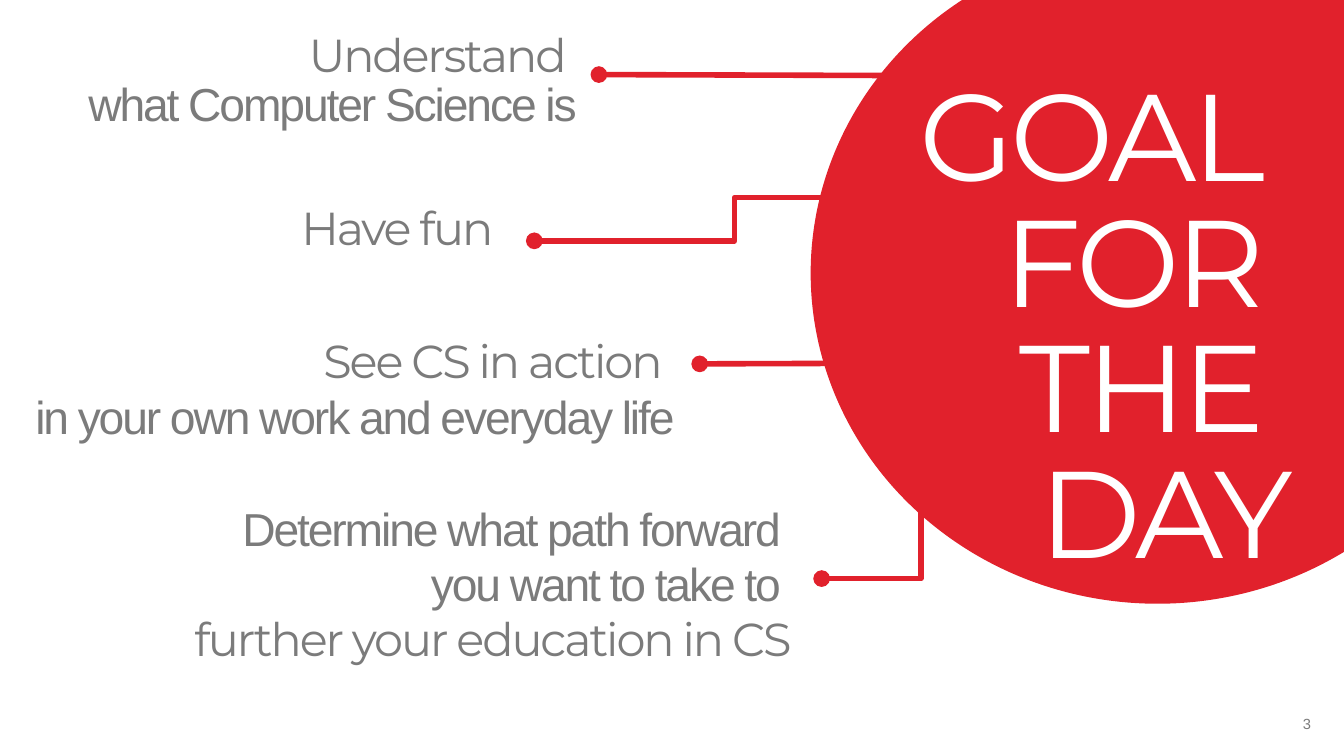
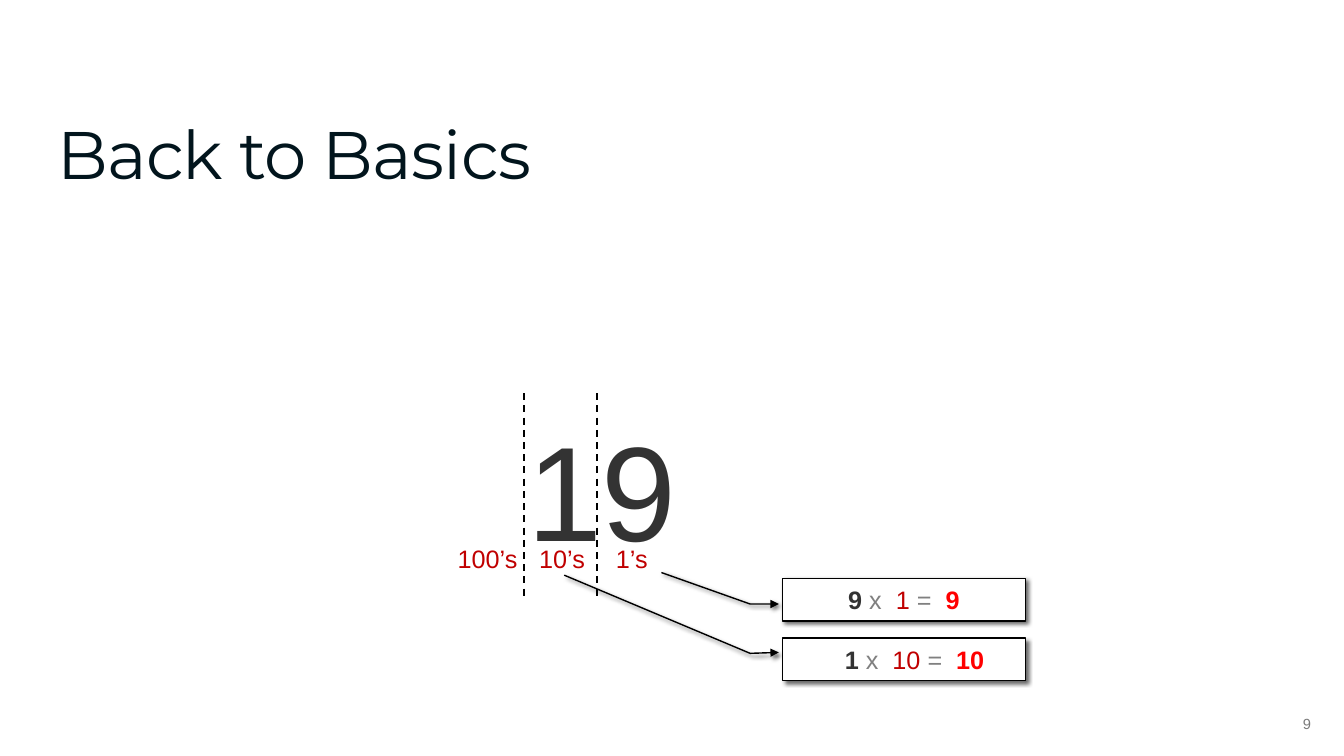
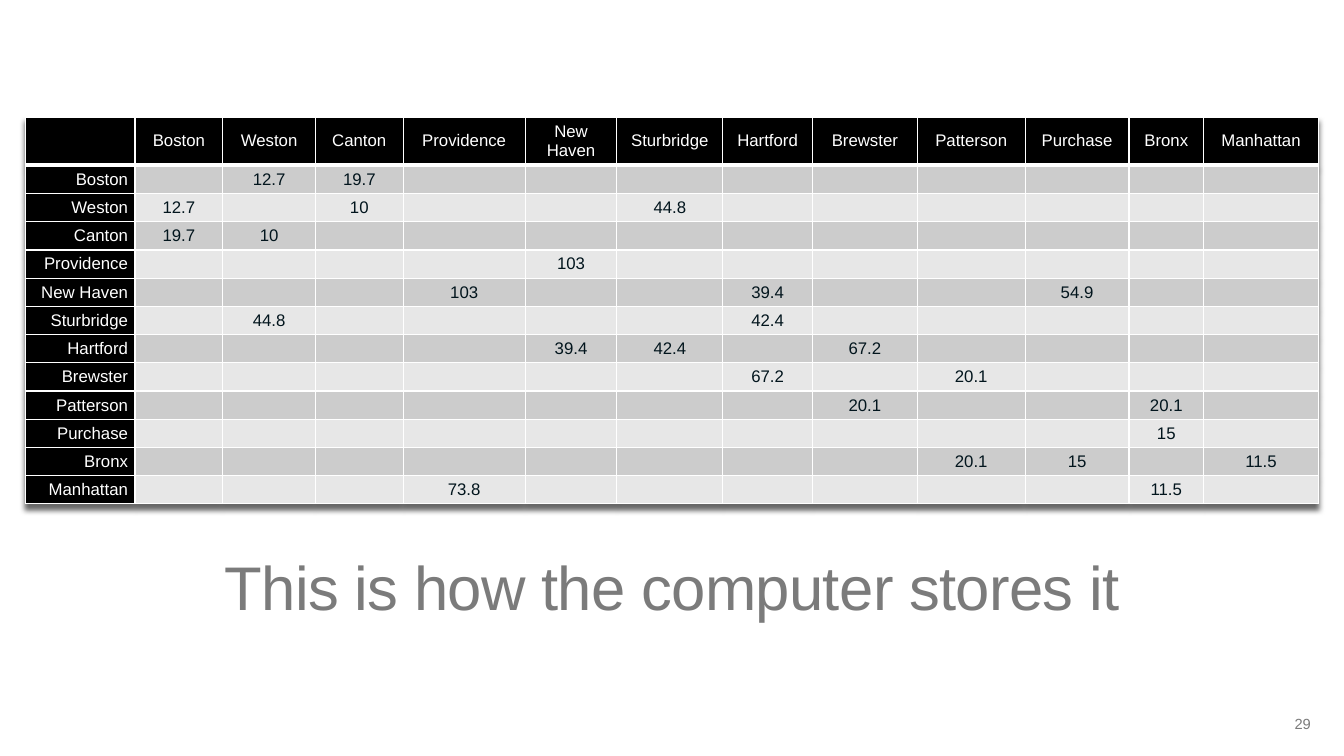
from dataclasses import dataclass

from lxml import etree
from pptx import Presentation
from pptx.dml.color import RGBColor
from pptx.enum.dml import MSO_LINE
from pptx.enum.shapes import MSO_CONNECTOR, MSO_SHAPE
from pptx.enum.text import MSO_ANCHOR, PP_ALIGN
from pptx.oxml.ns import qn
from pptx.util import Inches, Pt

LEFT, CENTER, RIGHT = PP_ALIGN.LEFT, PP_ALIGN.CENTER, PP_ALIGN.RIGHT
TOP, MIDDLE, BOTTOM = MSO_ANCHOR.TOP, MSO_ANCHOR.MIDDLE, MSO_ANCHOR.BOTTOM
STRAIGHT, ELBOW = MSO_CONNECTOR.STRAIGHT, MSO_CONNECTOR.ELBOW
OVAL, CALLOUT = MSO_SHAPE.OVAL, MSO_SHAPE.LINE_CALLOUT_2
DASH = MSO_LINE.DASH


@dataclass(frozen=True)
class Theme:
    sans: str = "Arial"
    display: str = "Montserrat"
    red: str = "E1212C"
    gray: str = "7B7B7B"
    ink: str = "02151D"
    black: str = "000000"
    white: str = "FFFFFF"
    digit: str = "333333"
    place: str = "C00000"
    operator: str = "808080"
    result: str = "FF0000"
    bands: tuple = ("CCCCCC", "E7E7E7")
    hero: float = 88
    title: float = 48
    caption: float = 44
    goal: float = 33
    number: float = 96
    label: float = 18
    cell: float = 12
    footer: float = 10.5


T = Theme()
GOAL = {"size": T.goal, "color": T.gray, "spacing": -1.5}
GOAL_SANS = {**GOAL, "name": T.sans}
GOAL_DISPLAY = {**GOAL, "name": T.display}
LABEL = {"name": T.sans, "size": T.label}
PLACE = {**LABEL, "color": T.place}

COLUMN_WIDTHS = [1.09, 0.87, 0.92, 0.87, 1.21, 0.91, 1.05, 0.89, 1.04, 1.07, 1.03, 0.74, 1.14]
DISTANCES = {
    "Boston": {"Weston": "12.7", "Canton": "19.7"},
    "Weston": {"Boston": "12.7", "Canton": "10", "Sturbridge": "44.8"},
    "Canton": {"Boston": "19.7", "Weston": "10"},
    "Providence": {"New Haven": "103"},
    "New Haven": {"Providence": "103", "Hartford": "39.4", "Purchase": "54.9"},
    "Sturbridge": {"Weston": "44.8", "Hartford": "42.4"},
    "Hartford": {"New Haven": "39.4", "Sturbridge": "42.4", "Brewster": "67.2"},
    "Brewster": {"Hartford": "67.2", "Patterson": "20.1"},
    "Patterson": {"Brewster": "20.1", "Bronx": "20.1"},
    "Purchase": {"Bronx": "15"},
    "Bronx": {"Patterson": "20.1", "Purchase": "15", "Manhattan": "11.5"},
    "Manhattan": {"Providence": "73.8", "Bronx": "11.5"},
}


def rgb(color):
    return RGBColor.from_string(color)


def child(parent, tag, **attrs):
    return etree.SubElement(parent, qn(tag), {k: str(v) for k, v in attrs.items()})


def add_run(p, text, fmt):
    for i, line in enumerate(text.split("\n")):
        if i:
            p.add_line_break()
        if not line:
            continue
        r = p.add_run()
        r.text = line
        for key, value in fmt.items():
            if key == "color":
                r.font.color.rgb = rgb(value)
            elif key == "spacing":
                r._r.get_or_add_rPr().set("spc", str(round(value * 100)))
            else:
                setattr(r.font, key, Pt(value) if key == "size" else value)


def fill_text(tf, paragraphs, align=LEFT, line_spacing=None):
    for i, runs in enumerate(paragraphs):
        p = tf.add_paragraph() if i else tf.paragraphs[0]
        p.alignment = align
        if line_spacing:
            p.line_spacing = line_spacing
        for text, fmt in runs:
            add_run(p, text, fmt)


def add_text(s, box, paragraphs, align=LEFT, anchor=TOP, line_spacing=None, wrap=True, side=0.1):
    tf = s.shapes.add_textbox(*map(Inches, box)).text_frame
    frame = {"word_wrap": wrap, "vertical_anchor": anchor,
             "margin_left": Inches(side), "margin_right": Inches(side)}
    for key, value in frame.items():
        setattr(tf, key, value)
    fill_text(tf, paragraphs, align, line_spacing)


def add_title(s, box, text, fmt, align=LEFT):
    add_text(s, box, [[(text, fmt)]], align, BOTTOM, line_spacing=0.85)


def add_slide(prs, number):
    s = prs.slides.add_slide(prs.slide_layouts[6])
    fmt = {"name": T.sans, "size": T.footer, "color": T.gray}
    add_text(s, (11.67, 6.98, 1.43, 0.4), [[(str(number), fmt)]], RIGHT, MIDDLE)
    return s


def add_line(s, kind, start, end, color, width, dash=None, tail=None):
    sp = s.shapes.add_connector(kind, *map(Inches, (*start, *end)))
    sp.line.color.rgb = rgb(color)
    sp.line.width = Pt(width)
    if dash:
        sp.line.dash_style = dash
    if tail:
        child(sp.line._get_or_add_ln(), "a:tailEnd", type=tail)
    child(sp._element.spPr, "a:effectLst")


def add_shadow(effects, blur, distance, degrees):
    shadow = child(effects, "a:outerShdw", blurRad=Pt(blur), dist=Pt(distance),
                   dir=degrees * 60000, algn="tl", rotWithShape=0)
    child(child(shadow, "a:srgbClr", val=T.black), "a:alpha", val=60000)


def add_callout(s, top, adjustments, digit, place, result, left_margin):
    sp = s.shapes.add_shape(CALLOUT, *map(Inches, (7.76, top, 2.41, 0.42)))
    for i, value in enumerate(adjustments):
        sp.adjustments[i] = value
    sp.fill.solid()
    sp.fill.fore_color.rgb = rgb(T.white)
    sp.line.color.rgb = rgb(T.black)
    sp.line.width = Pt(1)
    child(sp.line._get_or_add_ln(), "a:headEnd", type="triangle")
    sp.shadow.inherit = False
    add_shadow(sp._element.spPr.find(qn("a:effectLst")), 3, 2, 45)
    tf = sp.text_frame
    tf.vertical_anchor = MIDDLE
    tf.margin_left = Inches(left_margin)
    sign = {**LABEL, "color": T.operator, "spacing": 2.5}
    fill_text(tf, [[
        (f"{digit} ", {**LABEL, "color": T.digit, "bold": True}),
        ("x ", sign),
        (f"{place} ", PLACE),
        ("= ", sign),
        (result, {**LABEL, "color": T.result, "bold": True}),
    ]], CENTER)


def style_cell(cell, text, fill, color, align, top=1, bottom=1):
    cell.fill.solid()
    cell.fill.fore_color.rgb = rgb(fill)
    cell.vertical_anchor = MIDDLE
    for side, margin in {"left": 0.07, "right": 0.07, "top": 0.04, "bottom": 0.04}.items():
        setattr(cell, f"margin_{side}", Inches(margin))
    p = cell.text_frame.paragraphs[0]
    p.alignment = align
    if text:
        add_run(p, text, {"name": T.sans, "size": T.cell, "color": color})
    else:
        child(p._p, "a:endParaRPr", sz=T.cell * 100)
    tc_pr = cell._tc.get_or_add_tcPr()
    for i, (side, width) in enumerate({"L": 1, "R": 1, "T": top, "B": bottom}.items()):
        ln = child(tc_pr, f"a:ln{side}", w=Pt(width))
        child(child(ln, "a:solidFill"), "a:srgbClr", val=T.white)
        tc_pr.insert(i, ln)


def add_distance_table(s):
    cities = list(DISTANCES)
    size = len(cities) + 1
    table = s.shapes.add_table(size, size, *map(Inches, (0.25, 1.16, 12.83, 3.69))).table
    table.first_row = table.horz_banding = False
    effects = child(table._tbl.tblPr, "a:effectLst")
    table._tbl.tblPr.insert(0, effects)
    add_shadow(effects, 4, 4, 90)
    for column, width in zip(table.columns, COLUMN_WIDTHS):
        column.width = Inches(width)
    for i, row in enumerate(table.rows):
        row.height = Inches(0.27 if i else 0.45)
    for j, city in enumerate(["", *cities]):
        style_cell(table.cell(0, j), city, T.black, T.white, CENTER, bottom=3)
    for i, origin in enumerate(cities, 1):
        top = 3 if i == 1 else 1
        style_cell(table.cell(i, 0), origin, T.black, T.white, RIGHT, top)
        for j, target in enumerate(cities, 1):
            distance = DISTANCES[origin].get(target, "")
            style_cell(table.cell(i, j), distance, T.bands[(i - 1) % 2], T.ink, CENTER, top)


def build_goals(prs):
    s = add_slide(prs, 3)
    add_text(s, (0.72, 0.27, 5, 1.86),
             [[("Understand \n", GOAL_DISPLAY), ("what Computer Science is", GOAL_SANS)]],
             RIGHT, line_spacing=0.9, side=0)
    add_text(s, (2.89, 1.93, 6.02, 0.96), [[("Have fun", GOAL_DISPLAY)]])
    add_text(s, (0.13, 3.25, 6.64, 1.82),
             [[("See CS in action \n", GOAL_DISPLAY),
               ("in your own work and everyday life ", GOAL_SANS)]], RIGHT)
    add_text(s, (-0.03, 4.91, 7.98, 2.32),
             [[("Determine what path forward ", GOAL_SANS)],
              [("you want to take to ", GOAL_SANS)],
              [("further your education in CS", GOAL_DISPLAY)]], RIGHT)
    for kind, start, end in [
        (STRAIGHT, (12.21, 0.76), (5.94, 0.74)),
        (ELBOW, (9.27, 1.96), (5.3, 2.39)),
        (STRAIGHT, (9.83, 3.6), (6.94, 3.61)),
        (ELBOW, (10.12, 5.07), (8.15, 5.74)),
    ]:
        add_line(s, kind, start, end, T.red, 4, tail="oval")
    circle = s.shapes.add_shape(OVAL, *map(Inches, (8.04, -0.57, 6.88, 6.56)))
    circle.shadow.inherit = False
    circle.fill.solid()
    circle.fill.fore_color.rgb = rgb(T.red)
    circle.line.fill.background()
    add_title(s, (6.67, 1.96, 6.25, 3.88), "GOAL \nFOR \nTHE \nDAY",
              {"name": T.display, "size": T.hero, "color": T.white, "spacing": -3}, RIGHT)


def build_basics(prs):
    s = add_slide(prs, 9)
    add_title(s, (0.47, 0.38, 11, 1.59), "Back to Basics",
              {"name": T.display, "size": T.title, "color": T.ink, "spacing": -0.5})
    add_text(s, (0.47, 3.99, 11, 1.63),
             [[("19", {"name": T.sans, "size": T.number, "color": T.digit})]], CENTER)
    for text, left, width in [("100’s", 4.44, 0.8), ("10’s", 5.25, 0.66), ("1’s", 6.01, 0.52)]:
        add_text(s, (left, 5.34, width, 0.4), [[(text, PLACE)]], wrap=False)
    for x in (5.2, 5.92):
        add_line(s, STRAIGHT, (x, 3.9), (x, 5.93), T.black, 1.25, dash=DASH)
    add_callout(s, 5.74, (0.6, -0.015, 0.6, -0.133, -0.144, -0.498), "9", "1", "9", 0.1)
    add_callout(s, 6.33, (0.34, -0.015, 0.361, -0.133, -1.486, -0.898), "1", "10", "10", 0.31)


def build_storage(prs):
    s = add_slide(prs, 29)
    add_title(s, (0.25, 3.31, 12.83, 2.92), "This is how the computer stores it",
              {"name": T.sans, "size": T.caption, "color": T.gray, "spacing": -0.5}, CENTER)
    add_distance_table(s)


def main():
    prs = Presentation()
    prs.slide_width, prs.slide_height = Inches(13.33), Inches(7.5)
    build_goals(prs)
    build_basics(prs)
    build_storage(prs)
    prs.save("out.pptx")


if __name__ == "__main__":
    main()
